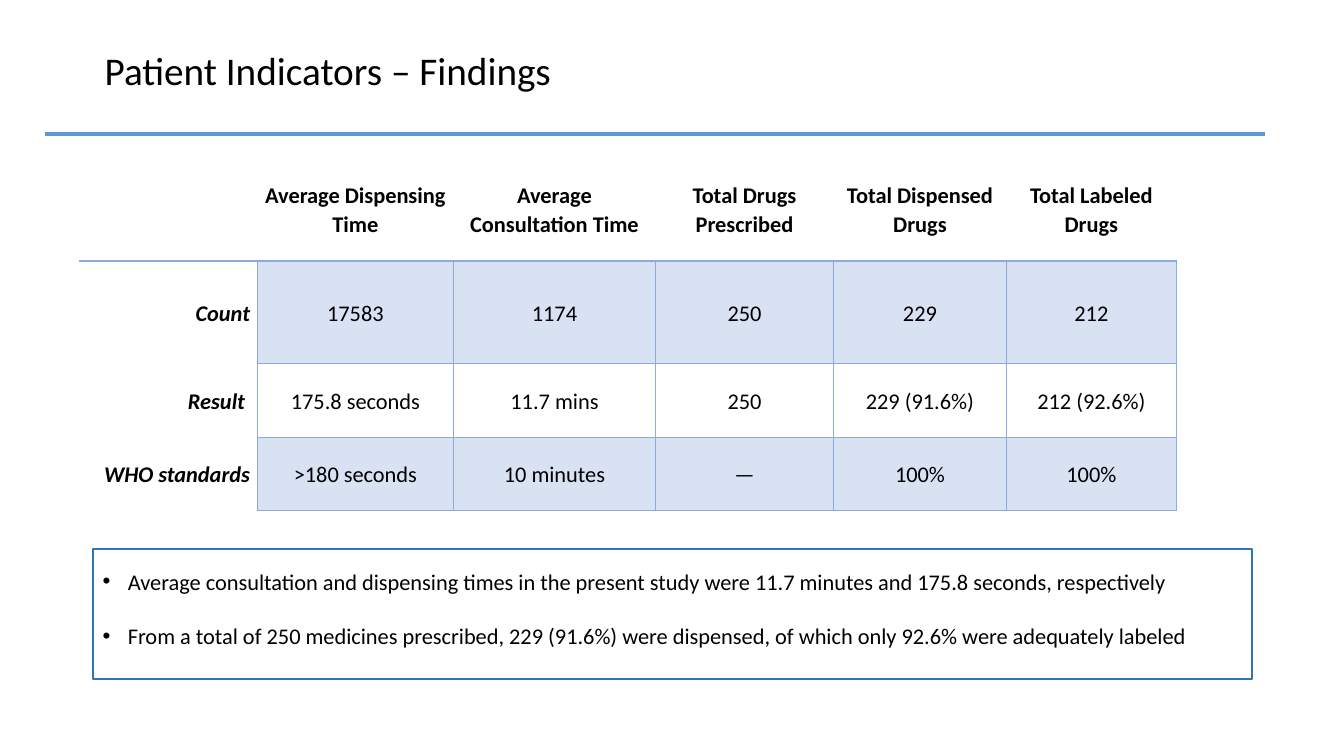
from dataclasses import dataclass
from lxml import etree
from pptx import Presentation
from pptx.dml import color
from pptx.enum import shapes, text
from pptx.oxml import ns
from pptx import util as u

WIDE, HIGH = u.Inches(13.33), u.Inches(7.5)
BLACK, WHITE, PALE, EDGE = "000000", "FFFFFF", "D9E2F3", "8EAADB"
BLUE, DARK = "5B9BD5", "2E75B6"
MID = text.MSO_ANCHOR.MIDDLE
LEFT, RIGHT, CENTER = text.PP_ALIGN.LEFT, text.PP_ALIGN.RIGHT, text.PP_ALIGN.CENTER


@dataclass
class Box:
    """Place and size in percent of the slide."""
    x: float
    y: float
    w: float
    h: float

    def emu(self) -> tuple:
        return across(self.x), down(self.y), across(self.w), down(self.h)


@dataclass
class Look:
    """How one kind of table cell is drawn."""
    fill: str
    sides: str
    align: int = CENTER
    bold: bool = False
    italic: bool = False


def across(share: float) -> int:
    return round(WIDE * share / 100)


def down(share: float) -> int:
    return round(HIGH * share / 100)


def rgb(code: str) -> color.RGBColor:
    return color.RGBColor.from_string(code)


def apply(item, **values) -> None:
    for name, value in values.items():
        setattr(item, name, value)


def write(para, words: str, size: int = 16, **style) -> None:
    para.text = words
    apply(para.font, name="Calibri", size=u.Pt(size), **style)
    para.font.color.rgb = rgb(BLACK)


def bullet(para) -> None:
    props = para._p.get_or_add_pPr()
    props.set("marL", str(u.Inches(0.25)))
    props.set("indent", str(-u.Inches(0.25)))
    etree.SubElement(props, ns.qn("a:buFont")).set("typeface", "Arial")
    etree.SubElement(props, ns.qn("a:buChar")).set("char", "•")


def border(cell, sides: str) -> None:
    props = cell._tc.get_or_add_tcPr()
    for spot, side in enumerate("LRTB"):
        line = etree.Element(ns.qn(f"a:ln{side}"), w=str(u.Pt(1)))
        if side in sides:
            fill = etree.SubElement(line, ns.qn("a:solidFill"))
            etree.SubElement(fill, ns.qn("a:srgbClr")).set("val", EDGE)
        else:
            etree.SubElement(line, ns.qn("a:noFill"))
        props.insert(spot, line)


def look(row: int, col: int) -> Look:
    if row == 0:
        return Look(WHITE, "B", bold=True)
    if col == 0:
        return Look(WHITE, "RT" if row == 1 else "R", RIGHT, True, True)
    return Look(PALE if row % 2 else WHITE, "LRTB")


def title(slide, box: Box, words: str) -> None:
    frame = slide.shapes.add_textbox(*box.emu()).text_frame
    apply(frame, word_wrap=True, vertical_anchor=MID)
    frame.paragraphs[0].line_spacing = 0.9
    write(frame.paragraphs[0], words, 28)


def rule(slide, x1: float, x2: float, y: float) -> None:
    line = slide.shapes.add_connector(
        shapes.MSO_CONNECTOR.STRAIGHT, across(x1), down(y), across(x2), down(y))
    line.line.color.rgb = rgb(BLUE)
    line.line.width = u.Pt(2.25)
    etree.SubElement(line._element.spPr, ns.qn("a:effectLst"))


def grid(slide, x: float, y: float, cols: list, rows: list, data: list) -> None:
    box = Box(x, y, sum(cols), sum(rows))
    table = slide.shapes.add_table(len(rows), len(cols), *box.emu()).table
    apply(table, first_row=False, horz_banding=False)
    for col, share in zip(table.columns, cols):
        col.width = across(share)
    for row, share in zip(table.rows, rows):
        row.height = down(share)
    for r, line in enumerate(data):
        for c, words in enumerate(line):
            cell, kind = table.cell(r, c), look(r, c)
            apply(cell, vertical_anchor=MID, margin_top=0, margin_bottom=0,
                  margin_left=u.Inches(0.07), margin_right=u.Inches(0.07))
            cell.fill.solid()
            cell.fill.fore_color.rgb = rgb(kind.fill)
            border(cell, kind.sides)
            para = cell.text_frame.paragraphs[0]
            apply(para, alignment=kind.align, line_spacing=1.07)
            write(para, words, bold=kind.bold, italic=kind.italic)


def notice(slide, box: Box, points: list) -> None:
    rect = slide.shapes.add_shape(shapes.MSO_SHAPE.RECTANGLE, *box.emu())
    rect.shadow.inherit = False
    rect.fill.background()
    rect.line.color.rgb = rgb(DARK)
    rect.line.width = u.Pt(1.5)
    frame = rect.text_frame
    apply(frame, word_wrap=True, vertical_anchor=text.MSO_ANCHOR.TOP)
    for i, words in enumerate(points):
        para = frame.add_paragraph() if i else frame.paragraphs[0]
        apply(para, alignment=LEFT, line_spacing=1.5, space_before=u.Pt(10 if i else 0))
        bullet(para)
        write(para, words)


def main() -> None:
    deck = Presentation()
    apply(deck, slide_width=WIDE, slide_height=HIGH)
    slide = deck.slides.add_slide(deck.slide_layouts[6])

    # Heading
    title(slide, Box(7.05, 0, 78.15, 19.33), "Patient Indicators – Findings")
    rule(slide, 3.38, 94.13, 17.73)

    # Indicator table
    grid(slide, 5.85, 20.93,
         [13.28, 14.63, 15, 13.28, 12.83, 12.68], [13.6, 13.6, 9.73, 9.73], [
             ["", "Average Dispensing Time", "Average Consultation Time",
              "Total Drugs Prescribed", "Total Dispensed Drugs", "Total Labeled Drugs"],
             ["Count", "17583", "1174", "250", "229", "212"],
             ["Result ", "175.8 seconds", "11.7 mins", "250", "229 (91.6%)", "212 (92.6%)"],
             ["WHO standards", ">180 seconds", "10 minutes", "—", "100%", "100%"]])

    # Summary
    notice(slide, Box(6.9, 73.2 - 0.53, 86.25, 17.2), [
        "Average consultation and dispensing times in the present study were "
        "11.7 minutes and 175.8 seconds, respectively",
        "From a total of 250 medicines prescribed, 229 (91.6%) were dispensed, "
        "of which only 92.6% were adequately labeled"])

    deck.save("out.pptx")


if __name__ == "__main__":
    main()
